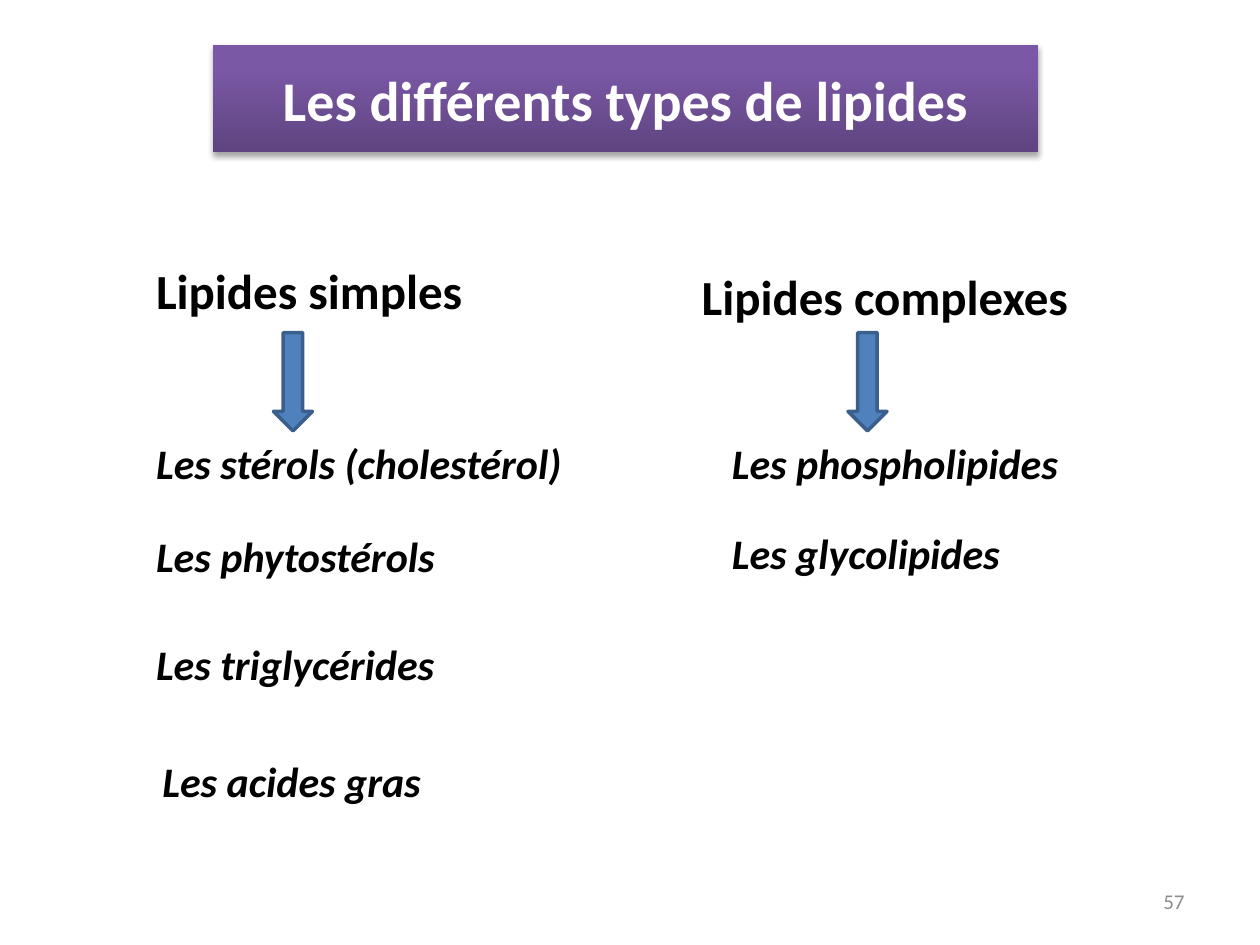
from copy import deepcopy

from pptx import Presentation
from pptx.dml.color import RGBColor
from pptx.enum.shapes import MSO_SHAPE
from pptx.enum.text import MSO_ANCHOR, MSO_AUTO_SIZE, PP_ALIGN
from pptx.oxml import parse_xml
from pptx.oxml.ns import nsdecls
from pptx.util import Inches, Pt

COLORS = {
    "black": "000000", "white": "FFFFFF", "grey": "8C8C8C",
    "blue": "4F81BD", "outline": "3A5F8C",
    "dark": "5F4480", "violet": "7B58A6", "light": "7C57A8",
}
SHADOW = (
    f'<a:effectLst {nsdecls("a")}><a:outerShdw blurRad="40000" dist="23000" '
    'dir="5400000" rotWithShape="0"><a:srgbClr val="000000">'
    '<a:alpha val="35000"/></a:srgbClr></a:outerShdw></a:effectLst>'
)


def rgb(name):
    return RGBColor.from_string(COLORS[name])


def write(tf, text, size=24, color="black", bold=True, italic=False,
          align=PP_ALIGN.LEFT, anchor=MSO_ANCHOR.TOP, wrap=False,
          fit=MSO_AUTO_SIZE.SHAPE_TO_FIT_TEXT):
    tf.word_wrap, tf.auto_size, tf.vertical_anchor = wrap, fit, anchor
    p = tf.paragraphs[0]
    p.alignment = align
    r = p.add_run()
    r.text = text
    r.font.name, r.font.size = "Calibri", Pt(size)
    r.font.bold, r.font.italic = bold, italic
    r.font.color.rgb = rgb(color)


class Deck:
    """Hold the style and current slide on a grid of 100 columns and 75 rows."""

    def __init__(self):
        self.prs = Presentation()
        self.prs.slide_width, self.prs.slide_height = Inches(10), Inches(7.5)
        self.s = self.prs.slides.add_slide(self.prs.slide_layouts[5])

    def box(self, col, row, cols, rows):
        w, h = self.prs.slide_width / 100, self.prs.slide_height / 75
        return [round(v) for v in (col * w, row * h, cols * w, rows * h)]

    def title(self, text, *cells):
        sp = self.s.shapes.title
        sp.left, sp.top, sp.width, sp.height = self.box(*cells)
        sp.fill.gradient()
        sp.fill.gradient_angle = 90
        first = sp.fill.gradient_stops[0]._gs
        first.addnext(deepcopy(first))
        stops = zip(sp.fill.gradient_stops, (0, 0.8, 1), ("dark", "violet", "light"))
        for stop, position, color in stops:
            stop.position, stop.color.rgb = position, rgb(color)
        sp._element.spPr.append(parse_xml(SHADOW))
        write(sp.text_frame, text, size=32, color="white", align=PP_ALIGN.CENTER,
              anchor=MSO_ANCHOR.MIDDLE, wrap=True, fit=MSO_AUTO_SIZE.NONE)

    def text(self, text, *cells, **style):
        sp = self.s.shapes.add_textbox(*self.box(*cells))
        write(sp.text_frame, text, **style)

    def arrow(self, col, row):
        sp = self.s.shapes.add_shape(MSO_SHAPE.DOWN_ARROW, *self.box(col, row, 3.1, 7.8))
        sp.shadow.inherit = False
        sp.fill.solid()
        sp.fill.fore_color.rgb = rgb("blue")
        sp.line.color.rgb, sp.line.width = rgb("outline"), Pt(2)

    def family(self, heading, heading_cells, arrow_col, members):
        self.text(heading, *heading_cells, size=28)
        self.arrow(arrow_col, 26.4)
        for name, col, row, cols in members:
            self.text(name, col, row, cols, 5, italic=True)


def main():
    deck = Deck()
    deck.title("Les différents types de lipides", 16.9, 3.6, 65.5, 8.5)
    deck.family("Lipides simples", (11.4, 20.2, 26.6, 5.7), 21.7, [
        ("Les stérols (cholestérol)", 11.4, 34.2, 34.8),
        ("Les phytostérols", 11.4, 41.6, 24.6),
        ("Les triglycérides", 11.4, 50.2, 24.4),
        ("Les acides gras", 11.9, 59.5, 22.7),
    ])
    deck.family("Lipides complexes", (54.7, 20.7, 31.4, 5.7), 67.3, [
        ("Les phospholipides", 57.1, 34.2, 28.6),
        ("Les glycolipides", 57.1, 41.4, 23.5),
    ])
    deck.text("57", 71.7, 69.5, 23.3, 4, size=12, color="grey", bold=False,
              align=PP_ALIGN.RIGHT, anchor=MSO_ANCHOR.MIDDLE, wrap=True,
              fit=MSO_AUTO_SIZE.NONE)
    deck.prs.save("out.pptx")


if __name__ == "__main__":
    main()
